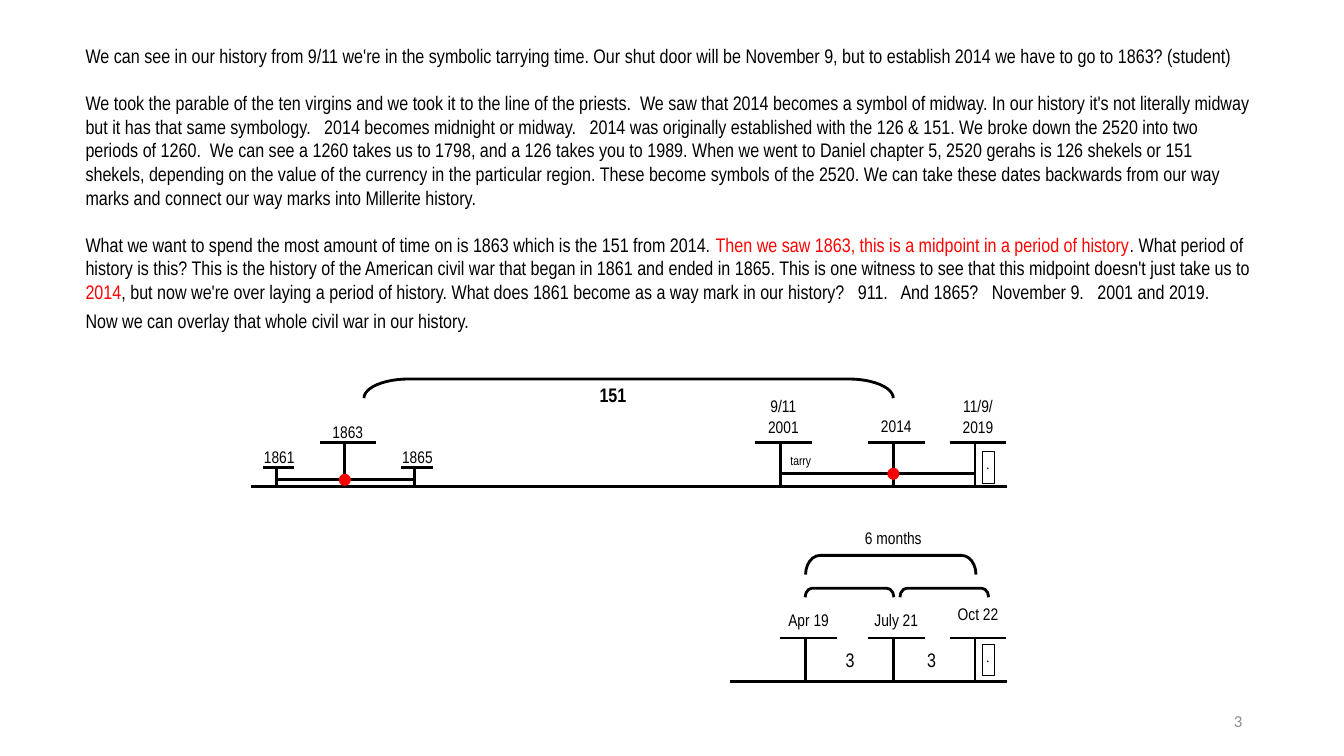
from lxml import etree
from pptx import Presentation
from pptx import util as u
from pptx.dml.color import RGBColor
from pptx.enum import shapes, text
from pptx.oxml.ns import qn

COLORS = {"black": "000000", "red": "FF0000", "grey": "8C8C8C"}
INSETS = ("margin_left", "margin_top", "margin_right", "margin_bottom")
NARROW = "Arial Narrow"

presentation = Presentation()
presentation.slide_width = u.Inches(13.33)
presentation.slide_height = u.Inches(7.5)
slide = presentation.slides.add_slide(presentation.slide_layouts[6])


def add_line(x1, y1, x2, y2):
    line = slide.shapes.add_connector(
        shapes.MSO_CONNECTOR.STRAIGHT, *map(u.Inches, (x1, y1, x2, y2)))
    line.line.color.rgb = RGBColor.from_string(COLORS["black"])
    line.line.width = u.Pt(2)
    etree.SubElement(line._element.spPr, qn("a:effectLst"))


def write_text(shape, paragraphs, align="CENTER", inset=0.04, space=0, **formats):
    """Each paragraph is a list of (text, format values) runs."""
    frame = shape.text_frame
    frame.word_wrap = True
    frame.vertical_anchor = text.MSO_ANCHOR.TOP
    for side in INSETS:
        setattr(frame, side, u.Inches(inset))
    for index, runs in enumerate(paragraphs):
        paragraph = frame.add_paragraph() if index else frame.paragraphs[0]
        paragraph.alignment = text.PP_ALIGN[align]
        paragraph.space_before = u.Pt(space if index else 0)
        for words, changes in runs:
            run = paragraph.add_run()
            run.text = words
            values = {"name": NARROW, "size": 12, "color": "black", **formats, **changes}
            run.font.color.rgb = RGBColor.from_string(COLORS[values.pop("color")])
            values["size"] = u.Pt(values["size"])
            for name, value in values.items():
                setattr(run.font, name, value)


# Body text
red = {"color": "red"}
body = [
    [("We can see in our history from 9/11 we're in the symbolic tarrying time. "
      "Our shut door will be November 9, but to establish 2014 we have to go to 1863? (student)", {})],
    [("We took the parable of the ten virgins and we took it to the line of the priests.  "
      "We saw that 2014 becomes a symbol of midway. In our history it's not literally midway "
      "but it has that same symbology.   2014 becomes midnight or midway.   2014 was originally "
      "established with the 126 & 151. We broke down the 2520 into two periods of 1260.  "
      "We can see a 1260 takes us to 1798, and a 126 takes you to 1989. When we went to Daniel "
      "chapter 5, 2520 gerahs is 126 shekels or 151 shekels, depending on the value of the "
      "currency in the particular region. These become symbols of the 2520. We can take these "
      "dates backwards from our way marks and connect our way marks into Millerite history.", {})],
    [("What we want to spend the most amount of time on is 1863 which is the 151 from 2014. ", {}),
     ("Then we saw 1863, this is a midpoint in a period of history", red),
     (". What period of history is this? This is the history of the American civil war that "
      "began in 1861 and ended in 1865. This is one witness to see that this midpoint doesn't "
      "just take us to ", {}),
     ("2014", red),
     (", but now we're over laying a period of history. What does 1861 become as a way mark in "
      "our history?   911.   And 1865?   November 9.   2001 and 2019.   "
      "Now we can overlay that whole civil war in our history.", {}),
     (" ", {"name": "Calibri", "size": 18})],
]
body_box = slide.shapes.add_textbox(*map(u.Inches, (0.75, 0.39, 11.77, 3.3)))
write_text(body_box, body, align="LEFT", inset=0.05, space=16.8, size=14)
body_box.text_frame.margin_left = body_box.text_frame.margin_right = u.Inches(0.1)

# Base lines and the spans above them
for x1, x2, y in [(2.49, 9.99, 4.83), (7.24, 9.99, 6.76), (7.74, 9.67, 4.7), (2.74, 4.11, 4.76)]:
    add_line(x1, y, x2, y)

# Way marks: stem x, base y, bar y, bar reach left and right, label top, label lines
wide, short = (0.25, 0.31), (0.13, 0.18)
way_marks = [
    (2.74, 4.83, 4.64, short, 4.39, ["1861"]),
    (3.42, 4.83, 4.39, wide, 4.14, ["1863"]),
    (4.11, 4.83, 4.64, short, 4.39, ["1865"]),
    (7.74, 4.83, 4.39, wide, 3.89, ["9/11", "2001"]),
    (8.86, 4.83, 4.39, wide, 4.08, ["2014"]),
    (9.67, 4.83, 4.39, wide, 3.89, ["11/9/", "2019"]),
    (7.99, 6.76, 6.33, wide, 6.01, ["Apr 19"]),
    (8.86, 6.76, 6.33, wide, 6.01, ["July 21"]),
    (9.67, 6.76, 6.33, wide, 5.95, ["Oct 22"]),
]
for x, base, bar, (left, right), top, lines in way_marks:
    add_line(x, bar, x, base)
    add_line(x - left, bar, x + right, bar)
    label = slide.shapes.add_textbox(*map(u.Inches, (x - 0.25, top, 0.56, bar - top)))
    write_text(label, [[(line, {})] for line in lines])

# Free labels
for words, left, top, width, height, align, formats in [
    ("3", 8.24, 6.39, 0.38, 0.31, "CENTER", {"size": 14}),
    ("3", 9.05, 6.39, 0.38, 0.31, "CENTER", {"size": 14}),
    ("6 months", 8.3, 5.2, 1.12, 0.31, "CENTER", {}),
    ("tarry", 7.8, 4.45, 0.56, 0.31, "LEFT", {"size": 9}),
    ("151", 5.8, 3.76, 0.56, 0.38, "CENTER", {"size": 14, "bold": True}),
]:
    label = slide.shapes.add_textbox(*map(u.Inches, (left, top, width, height)))
    write_text(label, [[(words, formats)]], align=align)

# Brackets, turned to open downwards
for left, top, depth, span, curve in [
    (6.14, 1.23, 0.19, 5.25, 2.33),
    (8.74, 4.76, 0.19, 1.69, 0.75),
    (8.38, 5.44, 0.09, 0.88, 0.78),
    (9.32, 5.44, 0.09, 0.88, 0.78),
]:
    bracket = slide.shapes.add_shape(
        shapes.MSO_SHAPE.LEFT_BRACKET, *map(u.Inches, (left, top, depth, span)))
    bracket.rotation = 90
    bracket.adjustments[0] = curve
    bracket.shadow.inherit = False
    bracket.fill.background()
    bracket.line.color.rgb = RGBColor.from_string(COLORS["black"])
    bracket.line.width = u.Pt(2)

# Midpoint dots
for left, top in [(3.36, 4.7), (8.8, 4.64)]:
    dot = slide.shapes.add_shape(
        shapes.MSO_SHAPE.OVAL, *map(u.Inches, (left, top, 0.12, 0.12)))
    dot.shadow.inherit = False
    dot.fill.solid()
    dot.fill.fore_color.rgb = RGBColor.from_string(COLORS["red"])
    dot.line.fill.background()

# Shut doors
for top in (4.48, 6.39):
    door = slide.shapes.add_shape(
        shapes.MSO_SHAPE.RECTANGLE, *map(u.Inches, (9.74, top, 0.12, 0.31)))
    door.shadow.inherit = False
    door.fill.background()
    door.line.color.rgb = RGBColor.from_string(COLORS["black"])
    door.line.width = u.Pt(0.25)
    write_text(door, [[(".", {})]], align="LEFT", name="Times New Roman", size=10)

# Slide number
number_box = slide.shapes.add_textbox(*map(u.Inches, (9.42, 6.95, 3, 0.4)))
write_text(number_box, [[("3", {})]], align="RIGHT", inset=0.1, name="Calibri", color="grey")
number_box.text_frame.vertical_anchor = text.MSO_ANCHOR.MIDDLE

presentation.save("out.pptx")
